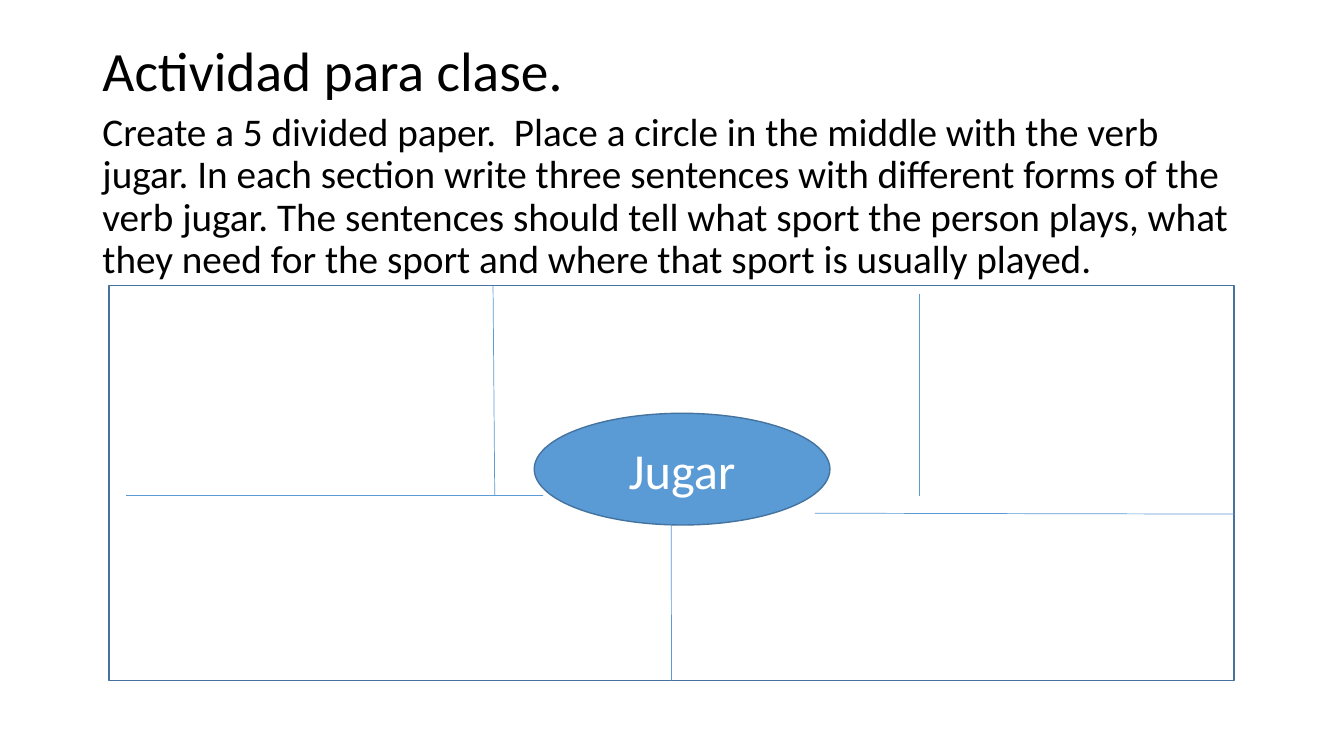
"""Build the class activity slide: instructions above a five-part sheet around the verb."""
import dataclasses
import typing

import lxml.etree
import pptx
import pptx.dml.color
import pptx.enum.shapes
import pptx.enum.text
import pptx.oxml.ns
import pptx.util

COLUMNS, ROWS = 160, 90
CELL = pptx.util.Inches(1) / 12


@dataclasses.dataclass(frozen=True)
class Theme:
    font: str = "Calibri"
    ink: str = "000000"
    light: str = "FFFFFF"
    accent: str = "5B9BD5"
    outline: str = "43739E"
    title_size: float = 39.6
    body_size: float = 28
    verb_size: float = 36
    outline_width: float = 1
    divider_width: float = 0.5


class Box(typing.NamedTuple):
    column: float
    row: float
    columns: float
    rows: float


class Divider(typing.NamedTuple):
    start: tuple[float, float]
    end: tuple[float, float]
    reaches_frame_bottom: bool = False


THEME = Theme()
TITLE_BOX = Box(11, 4.8, 138, 8)
BODY_BOX = Box(11, 12.8, 138, 68.3)
FRAME_BOX = Box(13, 34, 133.9, 47)
VERB_BOX = Box(63.6, 49.2, 35.2, 13.3)
DIVIDERS = (
    Divider((58.9, 59), (58.7, 34)),
    Divider((64.7, 59), (15, 59)),
    Divider((79.9, 60.5), (79.95, 81), reaches_frame_bottom=True),
    Divider((97, 61.1), (146.9, 61.2)),
    Divider((109.4, 35), (109.4, 59)),
)
INSTRUCTIONS = (
    "Create a 5 divided paper.  Place a circle in the middle with the verb jugar. "
    "In each section write three sentences with different forms of the verb jugar. "
    "The sentences should tell what sport the person plays, what they need for the sport "
    "and where that sport is usually played."
)


def cells(count: float) -> int:
    """Convert a number of grid cells to a length."""
    return round(count * CELL)


def colour(code: str) -> pptx.dml.color.RGBColor:
    """Return the colour for a hexadecimal code."""
    return pptx.dml.color.RGBColor.from_string(code)


def place(shape: typing.Any, box: Box) -> None:
    """Move a shape to its box on the grid."""
    shape.left, shape.top, shape.width, shape.height = map(cells, box)


def write(shape: typing.Any, text: str, *, size: float, ink: str = THEME.ink,
          alignment: typing.Any = pptx.enum.text.PP_ALIGN.LEFT,
          anchor: typing.Any = pptx.enum.text.MSO_ANCHOR.MIDDLE,
          line_spacing: float = 1, space_before: float = 0) -> None:
    """Write one unbulleted paragraph into a shape."""
    frame = shape.text_frame
    frame.word_wrap = True
    frame.auto_size = pptx.enum.text.MSO_AUTO_SIZE.NONE
    frame.vertical_anchor = anchor
    paragraph = frame.paragraphs[0]
    paragraph.alignment = alignment
    paragraph.line_spacing = line_spacing
    paragraph.space_before = pptx.util.Pt(space_before)
    properties = paragraph._p.get_or_add_pPr()
    properties.set("marL", "0")
    properties.set("indent", "0")
    lxml.etree.SubElement(properties, pptx.oxml.ns.qn("a:buNone"))
    run = paragraph.add_run()
    run.text = text
    run.font.name = THEME.font
    run.font.size = pptx.util.Pt(size)
    run.font.color.rgb = colour(ink)


def add_outlined(slide: typing.Any, kind: typing.Any, box: Box,
                 fill: str | None = None) -> typing.Any:
    """Add an outlined shape, filled when a colour is given."""
    shape = slide.shapes.add_shape(kind, *map(cells, box))
    shape.shadow.inherit = False
    if fill:
        shape.fill.solid()
        shape.fill.fore_color.rgb = colour(fill)
    else:
        shape.fill.background()
    shape.line.color.rgb = colour(THEME.outline)
    shape.line.width = pptx.util.Pt(THEME.outline_width)
    return shape


def add_divider(slide: typing.Any, divider: Divider, frame: typing.Any) -> None:
    """Draw a divider, joined to the frame where it meets the bottom middle."""
    connector = slide.shapes.add_connector(
        pptx.enum.shapes.MSO_CONNECTOR.STRAIGHT,
        *map(cells, divider.start + divider.end))
    connector.line.color.rgb = colour(THEME.accent)
    connector.line.width = pptx.util.Pt(THEME.divider_width)
    lxml.etree.SubElement(connector._element.spPr, pptx.oxml.ns.qn("a:effectLst"))
    if divider.reaches_frame_bottom:
        connector.end_connect(frame, 2)


def main() -> None:
    """Build and save the presentation."""
    presentation = pptx.Presentation()
    presentation.slide_width = cells(COLUMNS)
    presentation.slide_height = cells(ROWS)
    slide = presentation.slides.add_slide(presentation.slide_layouts[1])

    title, body = slide.shapes.title, slide.placeholders[1]
    place(title, TITLE_BOX)
    write(title, "Actividad para clase.", size=THEME.title_size, line_spacing=0.9)
    place(body, BODY_BOX)
    write(body, INSTRUCTIONS, size=THEME.body_size, line_spacing=0.9, space_before=10,
          anchor=pptx.enum.text.MSO_ANCHOR.TOP)

    shapes = pptx.enum.shapes.MSO_SHAPE
    frame = add_outlined(slide, shapes.RECTANGLE, FRAME_BOX)
    verb = add_outlined(slide, shapes.OVAL, VERB_BOX, THEME.accent)
    write(verb, "Jugar", size=THEME.verb_size, ink=THEME.light,
          alignment=pptx.enum.text.PP_ALIGN.CENTER)
    for divider in DIVIDERS:
        add_divider(slide, divider, frame)

    presentation.save("out.pptx")


if __name__ == "__main__":
    main()
